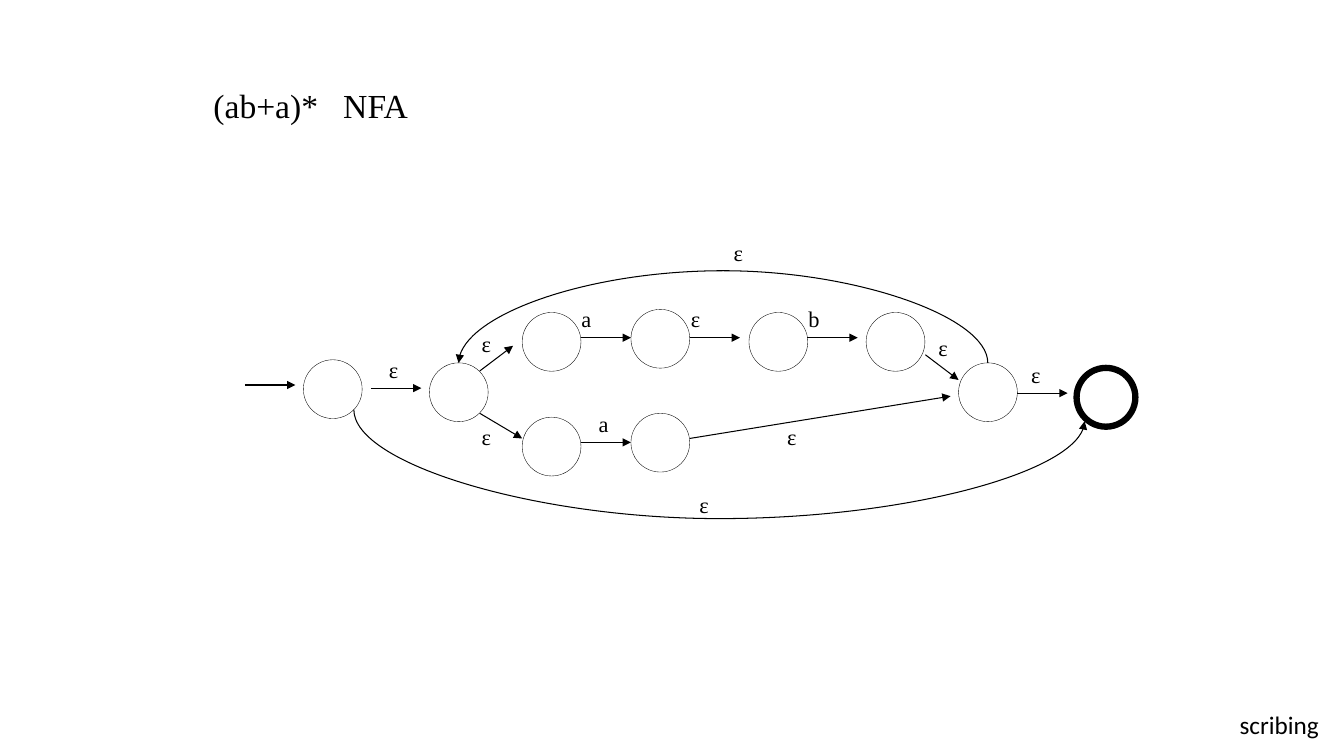
from lxml import etree
from pptx import Presentation
from pptx.dml.color import RGBColor
from pptx.enum.shapes import MSO_CONNECTOR, MSO_SHAPE
from pptx.enum.text import MSO_AUTO_SIZE
from pptx.oxml.ns import qn
from pptx.util import Pt

STRAIGHT, CURVE = MSO_CONNECTOR.STRAIGHT, MSO_CONNECTOR.CURVE
ELLIPSE = MSO_SHAPE.OVAL
FIT_SHAPE = MSO_AUTO_SIZE.SHAPE_TO_FIT_TEXT
INK = "000000"
SERIF, SANS = "Times New Roman", "Calibri"
DIAMETER = 42
STEP = 36

STATES = [
    (216.7, 257), (306.7, 259.2), (373, 223.2), (450.7, 221), (535, 223.2),
    (618.7, 223.2), (373, 298), (450.7, 295.2), (684.7, 259.2),
]
ACCEPTING = (769, 262.8)
LEVEL_ARROWS = [
    (175, 275), (265, 277.2), (414.7, 241.2), (492.6, 241.2),
    (576.7, 241.2), (414.7, 316), (726.6, 280.8),
]
SLANTED_ARROWS = [
    ((342.7, 265), (366.5, 247)), ((342.7, 295.2), (373, 313.2)),
    ((661, 253.4), (684.7, 271.4)), ((492.6, 313.2), (679, 283)),
]
TRANSITIONS = [
    ("a", 408.3, 214.6), ("ε", 486.5, 214.6), ("b", 570.3, 214.6),
    ("a", 420.5, 289.4), ("ε", 337, 232.6), ("ε", 337, 298.8),
    ("ε", 663.2, 235.4), ("ε", 555.2, 298.8), ("ε", 729.4, 254.2),
    ("ε", 270.8, 250.6), ("ε", 517, 167), ("ε", 492.5, 347),
]


def color(hex_string):
    """Turn a hex string into a colour."""
    return RGBColor.from_string(hex_string)


def add_text(slide, text, left, top, width, height, size, font, wrap=True):
    """Add a one-line text box and return its paragraph."""
    box = slide.shapes.add_textbox(Pt(left), Pt(top), Pt(width), Pt(height))
    frame = box.text_frame
    frame.word_wrap = wrap
    frame.auto_size = FIT_SHAPE
    paragraph = frame.paragraphs[0]
    run = paragraph.add_run()
    run.text = text
    run.font.size = Pt(size)
    run.font.name = font
    run.font.color.rgb = color(INK)
    return paragraph


def add_tab_stop(paragraph, position):
    """Set a left tab stop in a paragraph."""
    stops = etree.SubElement(paragraph._p.get_or_add_pPr(), qn("a:tabLst"))
    etree.SubElement(stops, qn("a:tab"), pos=str(Pt(position)), algn="l")


def add_state(slide, left, top, weight=0.25):
    """Add the circle of one automaton state."""
    state = slide.shapes.add_shape(
        ELLIPSE, Pt(left), Pt(top), Pt(DIAMETER), Pt(DIAMETER))
    state.shadow.inherit = False
    state.fill.background()
    state.line.color.rgb = color(INK)
    state.line.width = Pt(weight)


def add_arrow(slide, start, end, kind=STRAIGHT):
    """Add a connector with an arrowhead at its end."""
    arrow = slide.shapes.add_connector(kind, *map(Pt, (*start, *end)))
    arrow.line.color.rgb = color(INK)
    arrow.line.width = Pt(0.75)
    etree.SubElement(arrow.line._get_or_add_ln(), qn("a:tailEnd"), type="triangle")
    etree.SubElement(arrow._element.spPr, qn("a:effectLst"))
    return arrow


def add_arc(slide, start, end, sag):
    """Add a curved arrow that bulges vertically by sag from its start."""
    span, drop = end[0] - start[0], end[1] - start[1]
    middle_x, middle_y = (start[0] + end[0]) / 2, (start[1] + end[1]) / 2
    arc = add_arrow(
        slide,
        (middle_x + drop / 2, middle_y - span / 2),
        (middle_x - drop / 2, middle_y + span / 2),
        CURVE)
    properties = arc._element.spPr
    properties.find(qn("a:xfrm")).set("rot", "16200000")
    geometry = properties.find(qn("a:prstGeom"))
    adjustments = geometry.find(qn("a:avLst"))
    etree.SubElement(adjustments, qn("a:gd"), name="adj1",
                     fmla=f"val {round(sag / drop * 100000)}")


def main():
    """Build the automaton slide and save it."""
    deck = Presentation()
    deck.slide_width, deck.slide_height = Pt(960), Pt(540)
    slide = deck.slides.add_slide(deck.slide_layouts[6])

    title = add_text(slide, "(ab+a)*\tNFA", 145.4, 57, 168, 36, 24, SERIF)
    add_tab_stop(title, 92.7)
    for left, top in STATES:
        add_state(slide, left, top)
    add_state(slide, *ACCEPTING, weight=4.5)
    for x, y in LEVEL_ARROWS:
        add_arrow(slide, (x, y), (x + STEP, y))
    for start, end in SLANTED_ARROWS:
        add_arrow(slide, start, end)
    add_arc(slide, (705.6, 259.2), (327.6, 259.32), -69.65)
    add_arc(slide, (252.7, 292.6), (774.7, 300.9), 77.8)
    for symbol, left, top in TRANSITIONS:
        add_text(slide, symbol, left, top, 21.6, 26.6, 16, SERIF, wrap=False)
    add_text(slide, "scribing", 878.4, 503.3, 81, 29, 18, SANS)

    deck.save("out.pptx")


if __name__ == "__main__":
    main()
